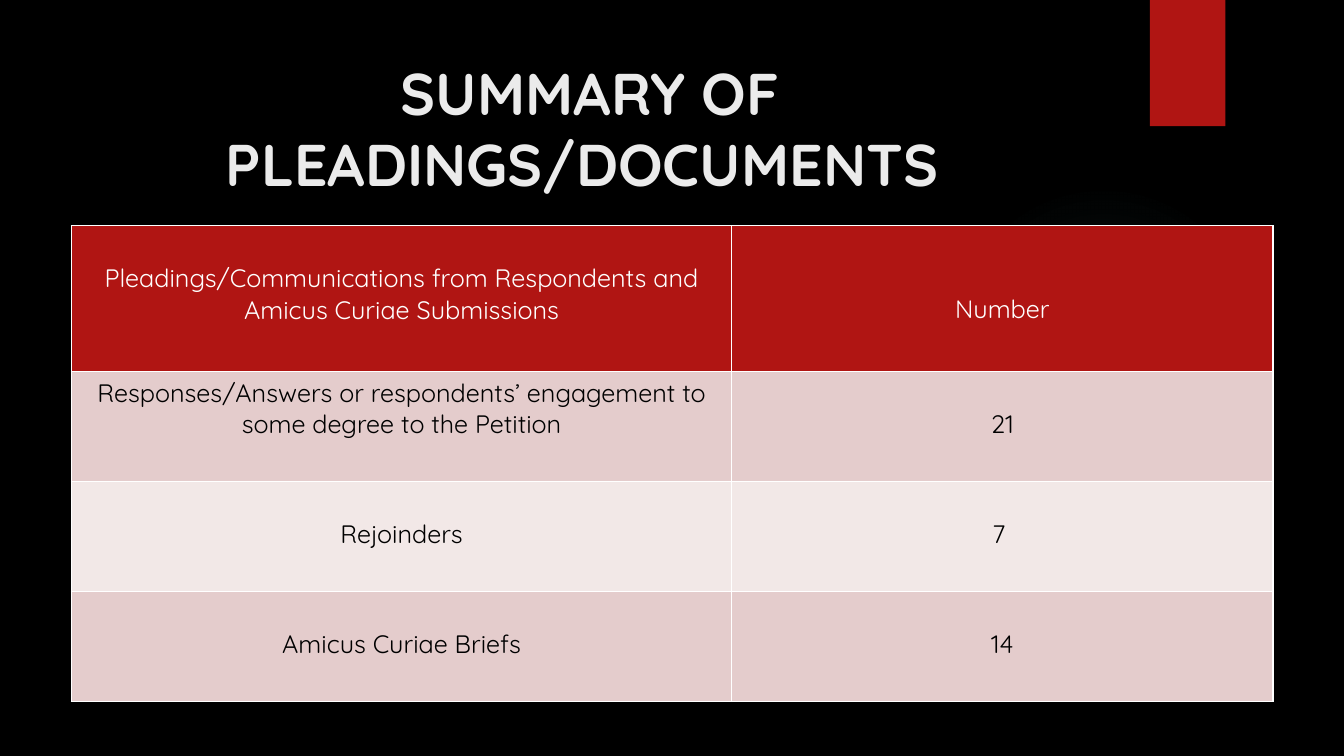
from pptx import Presentation
from pptx.dml.color import RGBColor
from pptx.enum.shapes import MSO_SHAPE as Preset
from pptx.enum.text import MSO_ANCHOR as Anchor, MSO_AUTO_SIZE as AutoSize, PP_ALIGN as Align
from pptx.oxml import parse_xml
from pptx.oxml.ns import nsdecls
from pptx.util import Cm, Pt

RED, PINK, PALE, WHITE, BLACK = "B01513", "E4CCCC", "F2E8E7", "FFFFFF", "000000"
LINE_HEIGHT = 0.79
TOP_INSET = 0.13

ROWS = [
    [("Pleadings/Communications from Respondents and Amicus Curiae Submissions", 1), ("Number", 2)],
    [("Responses/Answers or respondents’ engagement to some degree to the Petition", 0), ("21", 1)],
    [("Rejoinders", 1), ("7 ", 1)],
    [("Amicus Curiae Briefs", 1), ("14", 1)],
]


def colour(value):
    return RGBColor.from_string(value)


class SummarySlide:
    font_name = "Quicksand"

    def __init__(self, deck):
        self.page = deck.slides.add_slide(deck.slide_layouts[5])
        background = self.page.background.fill
        background.solid()
        background.fore_color.rgb = colour(BLACK)

    def format_text(self, paragraph, size, text_colour, bold=False):
        paragraph.alignment = Align.CENTER
        for span in paragraph.runs:
            span.font.name = self.font_name
            span.font.size = Pt(size)
            span.font.bold = bold
            span.font.color.rgb = colour(text_colour)

    def shape(self, preset, left, top, width, height, fill):
        box = self.page.shapes.add_shape(preset, Cm(left), Cm(top), Cm(width), Cm(height))
        box.shadow.inherit = False
        box.line.fill.background()
        box.fill.solid()
        box.fill.fore_color.rgb = colour(fill)
        return box

    def glow(self, left, top, size, tint, stops):
        box = self.shape(Preset.OVAL, left, top, size, size, tint)
        stop_xml = "".join(
            f'<a:gs pos="{position * 1000}"><a:srgbClr val="{tint}">'
            f'<a:alpha val="{alpha * 1000}"/></a:srgbClr></a:gs>'
            for position, alpha in stops
        )
        gradient = parse_xml(
            f'<a:gradFill {nsdecls("a")}><a:gsLst>{stop_xml}</a:gsLst><a:path path="circle">'
            '<a:fillToRect l="50000" t="50000" r="50000" b="50000"/></a:path></a:gradFill>'
        )
        properties = box.fill._xPr
        properties.replace(properties.solidFill, gradient)

    def title(self, text, left, top, width, height):
        box = self.page.shapes.title
        box.left, box.top, box.width, box.height = Cm(left), Cm(top), Cm(width), Cm(height)
        frame = box.text_frame
        frame.text = text
        frame.word_wrap = True
        frame.auto_size = AutoSize.NONE
        frame.vertical_anchor = Anchor.MIDDLE
        self.format_text(frame.paragraphs[0], 42, "EBEBEB", bold=True)

    def cell(self, cell, text, lines_above, fill, text_colour):
        cell.text_frame.text = text
        cell.vertical_anchor = Anchor.TOP
        cell.margin_top = Cm(TOP_INSET + lines_above * LINE_HEIGHT)
        self.format_text(cell.text_frame.paragraphs[0], 18, text_colour)
        properties = cell._tc.get_or_add_tcPr()
        for side in "LRTB":
            properties.append(parse_xml(
                f'<a:ln{side} {nsdecls("a")} w="{Pt(1)}"><a:solidFill>'
                f'<a:srgbClr val="{WHITE}"/></a:solidFill></a:ln{side}>'
            ))
        cell.fill.solid()
        cell.fill.fore_color.rgb = colour(fill)

    def table(self, rows, left, top, widths, heights):
        table = self.page.shapes.add_table(
            len(rows), len(widths), Cm(left), Cm(top), Cm(sum(widths)), Cm(sum(heights))
        ).table
        for column, width in zip(table.columns, widths):
            column.width = Cm(width)
        for index, (row, height) in enumerate(zip(rows, heights)):
            table.rows[index].height = Cm(height)
            fill = RED if index == 0 else PINK if index % 2 else PALE
            text_colour = WHITE if index == 0 else BLACK
            for place, (text, lines_above) in enumerate(row):
                self.cell(table.cell(index, place), text, lines_above, fill, text_colour)


def main():
    deck = Presentation()
    deck.slide_width, deck.slide_height = Cm(33.87), Cm(19.05)
    slide = SummarySlide(deck)
    slide.glow(23.9, 4.65, 7.82, "50B9C1", [(0, 7), (36, 6), (69, 0)])
    slide.shape(Preset.RECTANGLE, 28.98, 0, 1.9, 3.18, RED)
    slide.title("SUMMARY OF PLEADINGS/DOCUMENTS ", 1.8, 1.27, 26.14, 3.89)
    slide.table(ROWS, 1.8, 5.69, [16.64, 13.64], [3.68] + [2.77] * 3)
    deck.save("out.pptx")


if __name__ == "__main__":
    main()
